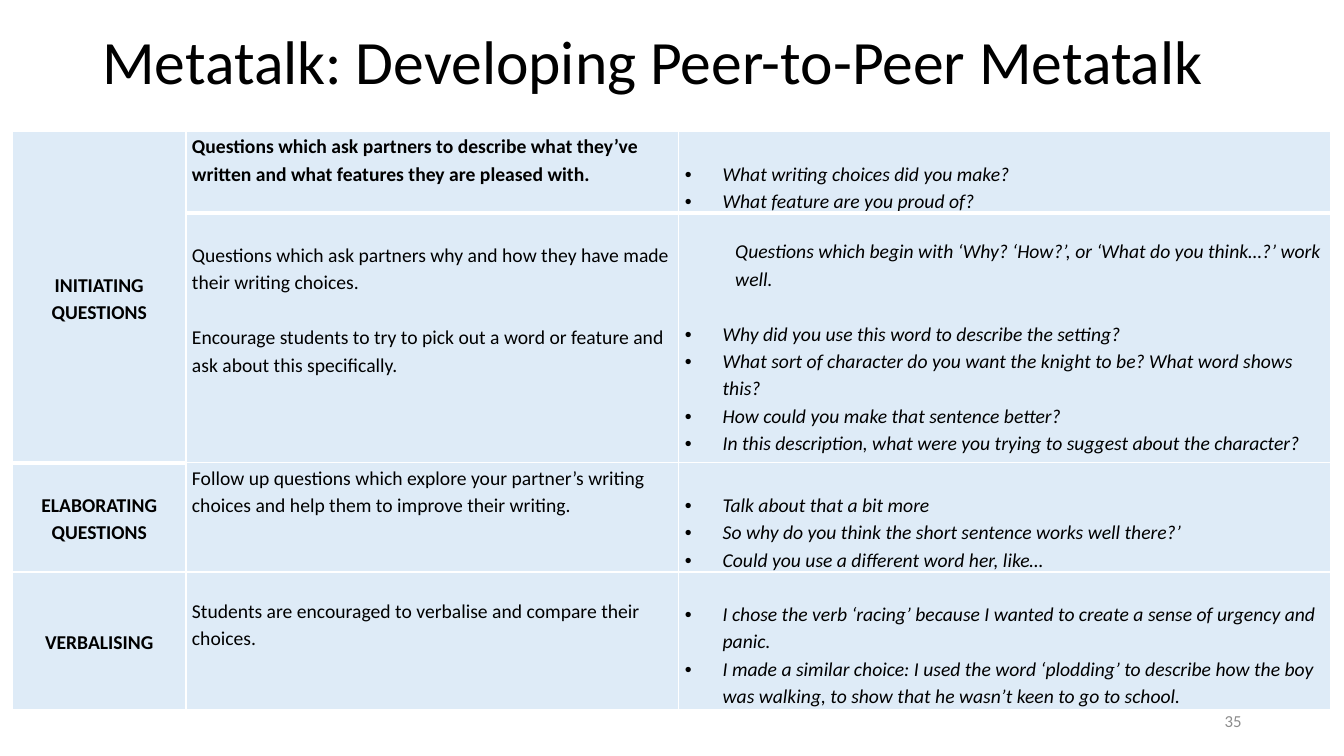
from lxml import etree
from pptx import Presentation
from pptx.dml.color import RGBColor
from pptx.enum.text import MSO_ANCHOR, PP_ALIGN
from pptx.oxml.ns import qn
from pptx.util import Pt

LEFT, CENTER, RIGHT = PP_ALIGN.LEFT, PP_ALIGN.CENTER, PP_ALIGN.RIGHT
TOP, MIDDLE = MSO_ANCHOR.TOP, MSO_ANCHOR.MIDDLE
BLACK = RGBColor(0x00, 0x00, 0x00)
GREY = RGBColor(0x8C, 0x8C, 0x8C)
WHITE = RGBColor(0xFF, 0xFF, 0xFF)
PALE_BLUE = RGBColor(0xDE, 0xEB, 0xF7)

LINE = 19.5
SHORT_LINE = 17
BULLET_INDENT = 27
QUOTE_INDENT = 36
COLUMNS = [123.84, 352.08, 465.84]
ROWS = [58, 178.5, 78, 98]

HEADINGS = {0: "INITIATING QUESTIONS", 2: "ELABORATING QUESTIONS", 3: "VERBALISING"}
GUIDANCE = [
    (0, True, ["Questions which ask partners to describe what they’ve written and what features they are pleased with."]),
    (LINE, False, [
        "Questions which ask partners why and how they have made their writing choices.",
        "Encourage students to try to pick out a word or feature and ask about this specifically.",
    ]),
    (0, False, ["Follow up questions which explore your partner’s writing choices and help them to improve their writing."]),
    (SHORT_LINE, False, ["Students are encouraged to verbalise and compare their choices."]),
]
WHY_HOW = "Questions which begin with ‘Why? ‘How?’, or ‘What do you think…?’ work well."
EXAMPLES = [
    (LINE, None, ["What writing choices did you make?", "What feature are you proud of?"]),
    (SHORT_LINE, WHY_HOW, [
        "Why did you use this word to describe the setting?",
        "What sort of character do you want the knight to be? What word shows this?",
        "How could you make that sentence better?",
        "In this description, what were you trying to suggest about the character?",
    ]),
    (LINE, None, [
        "Talk about that a bit more",
        "So why do you think the short sentence works well there?’",
        "Could you use a different word her, like…",
    ]),
    (LINE, None, [
        "I chose the verb ‘racing’ because I wanted to create a sense of urgency and panic.",
        "I made a similar choice: I used the word ‘plodding’ to describe how the boy was walking, to show that he wasn’t keen to go to school.",
    ]),
]


class Deck:
    font = "Calibri"
    body_size = 14
    body_spacing = 1.15

    def __init__(self):
        self.prs = Presentation()
        self.prs.slide_width, self.prs.slide_height = Pt(960), Pt(540)
        self.s = self.prs.slides.add_slide(self.prs.slide_layouts[6])

    def run(self, p, text, size, color=BLACK, bold=False, italic=False):
        r = p.add_run()
        r.text = text
        r.font.name, r.font.size = self.font, Pt(size)
        r.font.bold, r.font.italic = bold, italic
        r.font.color.rgb = color

    def text(self, x, y, w, h, text, size, color=BLACK, align=LEFT, spacing=1.0):
        tf = self.s.shapes.add_textbox(Pt(x), Pt(y), Pt(w), Pt(h)).text_frame
        tf.word_wrap, tf.vertical_anchor = True, MIDDLE
        p = tf.paragraphs[0]
        p.alignment, p.line_spacing = align, spacing
        self.run(p, text, size, color)

    def table(self, x, y, columns, rows):
        shape = self.s.shapes.add_table(len(rows), len(columns), Pt(x), Pt(y), Pt(sum(columns)), Pt(sum(rows)))
        table = shape.table
        table.first_row = table.horz_banding = False
        for column, width in zip(table.columns, columns):
            column.width = Pt(width)
        for row, height in zip(table.rows, rows):
            row.height = Pt(height)
        return table

    def cell(self, cell, top=0, anchor=TOP, above=1, below=1):
        cell.margin_left = cell.margin_right = Pt(4.3)
        cell.margin_top, cell.margin_bottom = Pt(top), 0
        cell.vertical_anchor = anchor
        tcPr = cell._tc.get_or_add_tcPr()
        for edge, weight in (("L", 1), ("R", 1), ("T", above), ("B", below)):
            ln = etree.SubElement(tcPr, qn(f"a:ln{edge}"), w=str(Pt(weight)))
            fill = etree.SubElement(ln, qn("a:solidFill"))
            etree.SubElement(fill, qn("a:srgbClr"), val=str(WHITE))
        cell.fill.solid()
        cell.fill.fore_color.rgb = PALE_BLUE

    def paragraph(self, cell, text, align=LEFT, before=0, indent=0, bullet=False, bold=False, italic=False):
        tf = cell.text_frame
        p = tf.add_paragraph() if tf.text else tf.paragraphs[0]
        p.alignment, p.line_spacing, p.space_before = align, self.body_spacing, Pt(before)
        pPr = p._p.get_or_add_pPr()
        pPr.set("marL", str(Pt(indent)))
        if bullet:
            pPr.set("indent", str(-Pt(indent)))
            etree.SubElement(pPr, qn("a:buFont"), typeface="Arial")
            etree.SubElement(pPr, qn("a:buChar"), char="•")
        self.run(p, text, self.body_size, bold=bold, italic=italic)


def main():
    deck = Deck()
    deck.text(66, -6, 828, 104.4, "Metatalk: Developing Peer-to-Peer Metatalk", 44, spacing=0.9)
    deck.text(678, 500.5, 216, 28.8, "35", 12, GREY, RIGHT)

    table = deck.table(9, 94, COLUMNS, ROWS)
    table.cell(0, 0).merge(table.cell(1, 0))
    for i, (guide, example) in enumerate(zip(GUIDANCE, EXAMPLES)):
        above, below = (3 if i == 1 else 1), (3 if i == 0 else 1)
        heading = table.cell(i, 0)
        deck.cell(heading, 0, MIDDLE, 3 if i == 2 else 1, 3 if i < 2 else 1)
        if i in HEADINGS:
            deck.paragraph(heading, HEADINGS[i], CENTER, bold=True)

        top, bold, texts = guide
        cell = table.cell(i, 1)
        deck.cell(cell, top, TOP, above, below)
        for n, text in enumerate(texts):
            deck.paragraph(cell, text, before=LINE if n else 0, bold=bold)

        top, intro, questions = example
        cell = table.cell(i, 2)
        deck.cell(cell, top, TOP, above, below)
        if intro:
            deck.paragraph(cell, intro, indent=QUOTE_INDENT, italic=True)
        for n, text in enumerate(questions):
            before = LINE if intro and n == 0 else 0
            deck.paragraph(cell, text, before=before, indent=BULLET_INDENT, bullet=True, italic=True)

    deck.prs.save("out.pptx")


if __name__ == "__main__":
    main()
